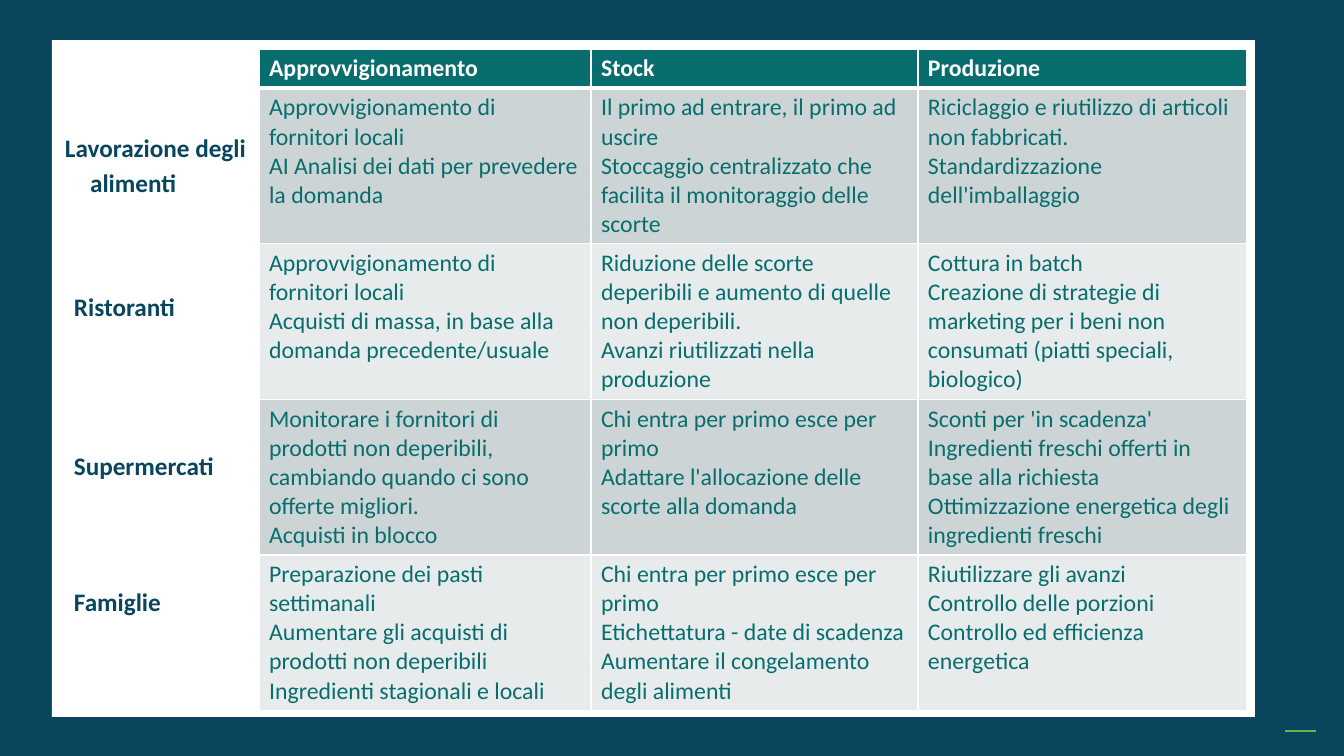
from lxml import etree
from pptx import Presentation
from pptx import util as u
from pptx.dml.color import RGBColor
from pptx.enum import shapes
from pptx.oxml.ns import qn

NAVY = RGBColor(0x09, 0x46, 0x5E)
TEAL = RGBColor(0x08, 0x6D, 0x6E)
GREEN = RGBColor(0x60, 0xBA, 0x47)
WHITE = RGBColor(0xFF, 0xFF, 0xFF)
BANDS = [RGBColor(0xCC, 0xD4, 0xD5), RGBColor(0xE7, 0xEB, 0xEB)]
FONT = "Calibri"

# Each cell is a list of paragraphs.
HEADER = [["Approvvigionamento"], ["Stock"], ["Produzione"]]
BODY = [
    [["Approvvigionamento di fornitori locali",
      "AI Analisi dei dati per prevedere la domanda"],
     ["Il primo ad entrare, il primo ad uscire",
      "Stoccaggio centralizzato che facilita il monitoraggio delle scorte"],
     ["Riciclaggio e riutilizzo di articoli non fabbricati.",
      "Standardizzazione dell'imballaggio"]],
    [["Approvvigionamento di fornitori locali",
      "Acquisti di massa, in base alla domanda precedente/usuale"],
     ["Riduzione delle scorte deperibili e aumento di quelle non deperibili.",
      "Avanzi riutilizzati nella produzione"],
     ["Cottura in batch",
      "Creazione di strategie di marketing per i beni non consumati "
      "(piatti speciali, biologico)"]],
    [["Monitorare i fornitori di prodotti non deperibili, "
      "cambiando quando ci sono offerte migliori.",
      "Acquisti in blocco"],
     ["Chi entra per primo esce per primo",
      "Adattare l'allocazione delle scorte alla domanda"],
     ["Sconti per 'in scadenza'",
      "Ingredienti freschi offerti in base alla richiesta",
      "Ottimizzazione energetica degli ingredienti freschi"]],
    [["Preparazione dei pasti settimanali",
      "Aumentare gli acquisti di prodotti non deperibili",
      "Ingredienti stagionali e locali"],
     ["Chi entra per primo esce per primo",
      "Etichettatura - date di scadenza",
      "Aumentare il congelamento degli alimenti"],
     ["Riutilizzare gli avanzi",
      "Controllo delle porzioni",
      "Controllo ed efficienza energetica"]],
]
# Sector label, left, top
SECTORS = [
    ("Lavorazione degli alimenti", 55, 123),
    ("Ristoranti", 64, 282),
    ("Supermercati", 64, 441),
    ("Famiglie", 64, 577),
]
LABEL_SIZE = (218, 55)

SLIDE_SIZE = (1344, 756)
PANEL = (52, 40, 1203, 677)
ACCENT = (1285, 731, 1316, 731)
TABLE_ORIGIN = (259, 49)
COLUMN_WIDTHS = [332, 327, 329]
HEADER_HEIGHT, BODY_HEIGHT = 39, 155


def px(*lengths):
    return [u.Emu(round(length * 914400 / 100.8)) for length in lengths]


def style(paragraph, size, color, bold):
    font = paragraph.font
    font.name, font.size, font.bold = FONT, u.Pt(size), bold
    font.color.rgb = color


def add_rectangle(slide, box, color):
    shape = slide.shapes.add_shape(shapes.MSO_SHAPE.RECTANGLE, *px(*box))
    shape.shadow.inherit = False
    shape.fill.solid()
    shape.fill.fore_color.rgb = color
    shape.line.fill.background()


def add_accent(slide):
    line = slide.shapes.add_connector(shapes.MSO_CONNECTOR.STRAIGHT, *px(*ACCENT))
    line.line.color.rgb = GREEN
    line.line.width = u.Pt(1)
    etree.SubElement(line._element.spPr, qn("a:effectLst"))


def set_borders(cell, top, bottom):
    """Draw white cell borders; top and bottom are widths in points."""
    properties = cell._tc.get_or_add_tcPr()
    sides = [("L", 1), ("R", 1), ("T", top), ("B", bottom)]
    for position, (side, width) in enumerate(sides):
        border = etree.Element(qn("a:ln" + side), w=str(u.Pt(width)))
        fill = etree.SubElement(border, qn("a:solidFill"))
        etree.SubElement(fill, qn("a:srgbClr"), val=str(WHITE))
        properties.insert(position, border)


def add_strategy_table(slide):
    rows = [HEADER] + BODY
    heights = [HEADER_HEIGHT] + [BODY_HEIGHT] * len(BODY)
    frame = slide.shapes.add_table(
        len(rows), len(COLUMN_WIDTHS),
        *px(*TABLE_ORIGIN, sum(COLUMN_WIDTHS), sum(heights)))
    table = frame.table
    for column, width in zip(table.columns, px(*COLUMN_WIDTHS)):
        column.width = width
    for row, height in zip(table.rows, px(*heights)):
        row.height = height
    for r, row in enumerate(rows):
        is_header = r == 0
        for c, lines in enumerate(row):
            cell = table.cell(r, c)
            cell.text = "\n".join(lines)
            for paragraph in cell.text_frame.paragraphs:
                style(paragraph, 17, WHITE if is_header else TEAL, is_header)
            cell.fill.solid()
            cell.fill.fore_color.rgb = TEAL if is_header else BANDS[(r - 1) % 2]
            set_borders(cell, 3 if r == 1 else 1, 3 if is_header else 1)


def add_sector_label(slide, label, left, top):
    box = slide.shapes.add_textbox(*px(left, top, *LABEL_SIZE))
    box.text_frame.word_wrap = True
    paragraph = box.text_frame.paragraphs[0]
    paragraph.text = label
    paragraph.line_spacing = u.Pt(24.8)
    indent = u.Inches(0.25)
    properties = paragraph._p.get_or_add_pPr()
    properties.set("marL", str(indent))
    properties.set("indent", str(-indent))
    style(paragraph, 18, NAVY, True)


def main():
    presentation = Presentation()
    presentation.slide_width, presentation.slide_height = px(*SLIDE_SIZE)
    slide = presentation.slides.add_slide(presentation.slide_layouts[6])
    add_rectangle(slide, (0, 0, *SLIDE_SIZE), NAVY)
    add_rectangle(slide, PANEL, WHITE)
    add_accent(slide)
    add_strategy_table(slide)
    for sector in SECTORS:
        add_sector_label(slide, *sector)
    presentation.save("out.pptx")


if __name__ == "__main__":
    main()
